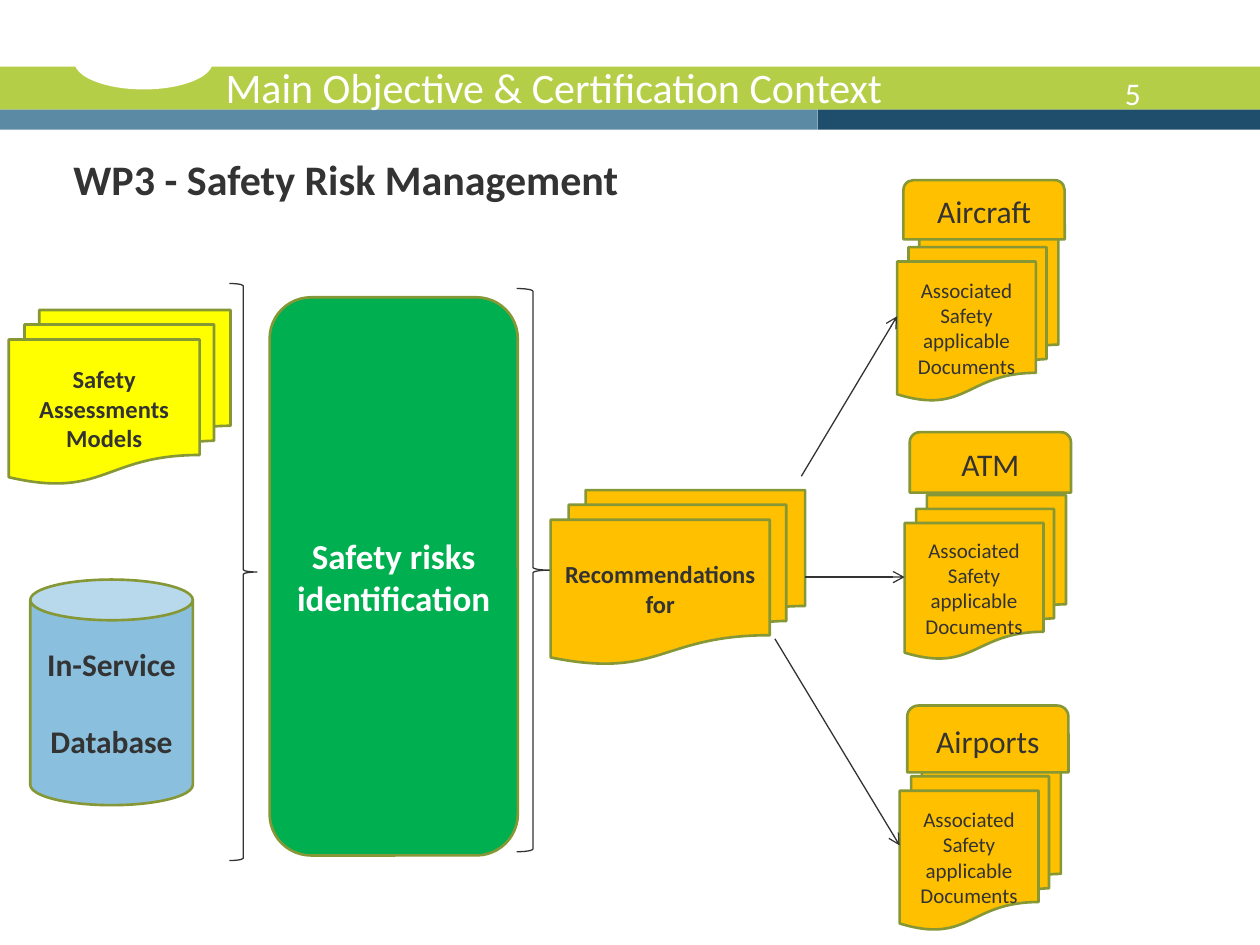
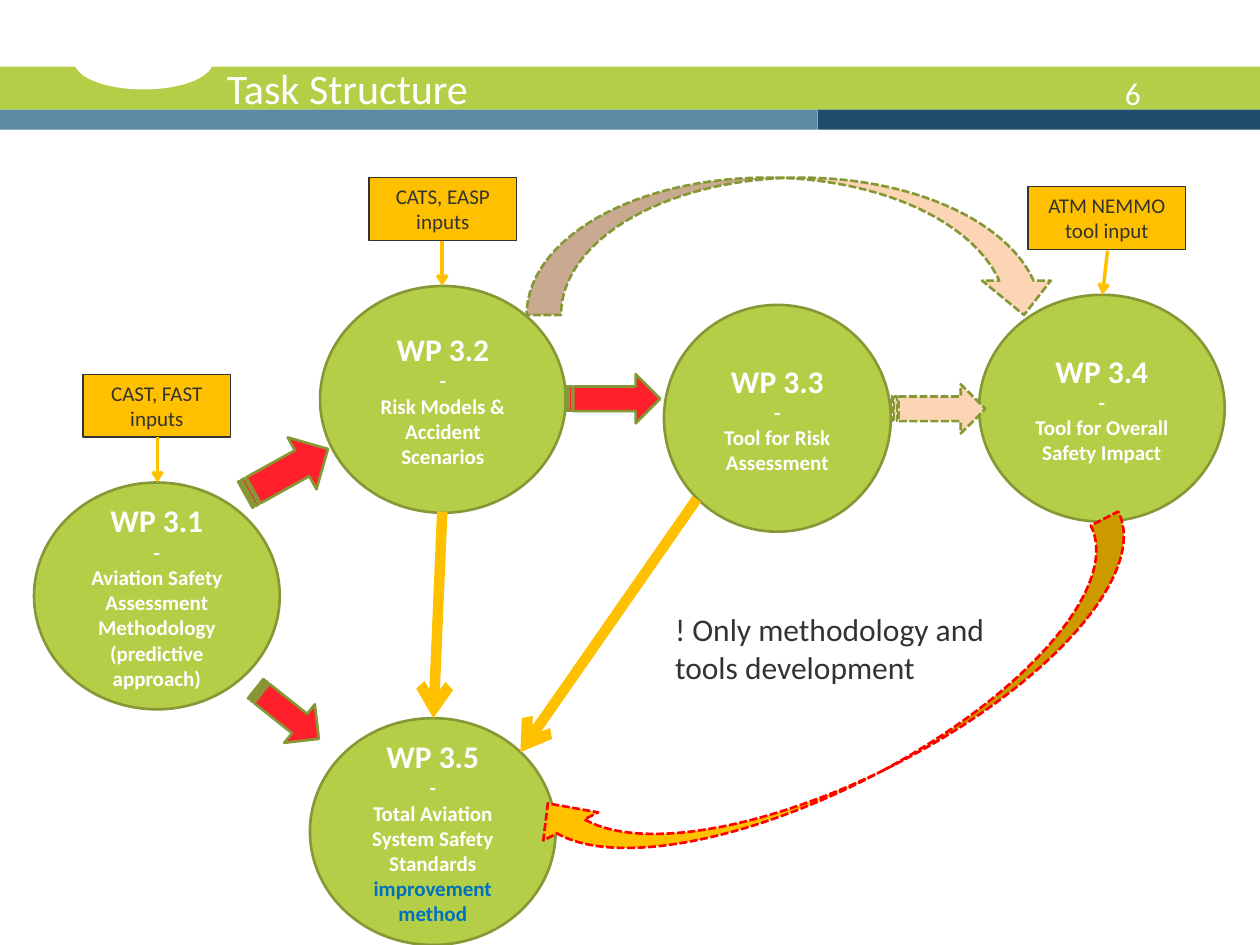
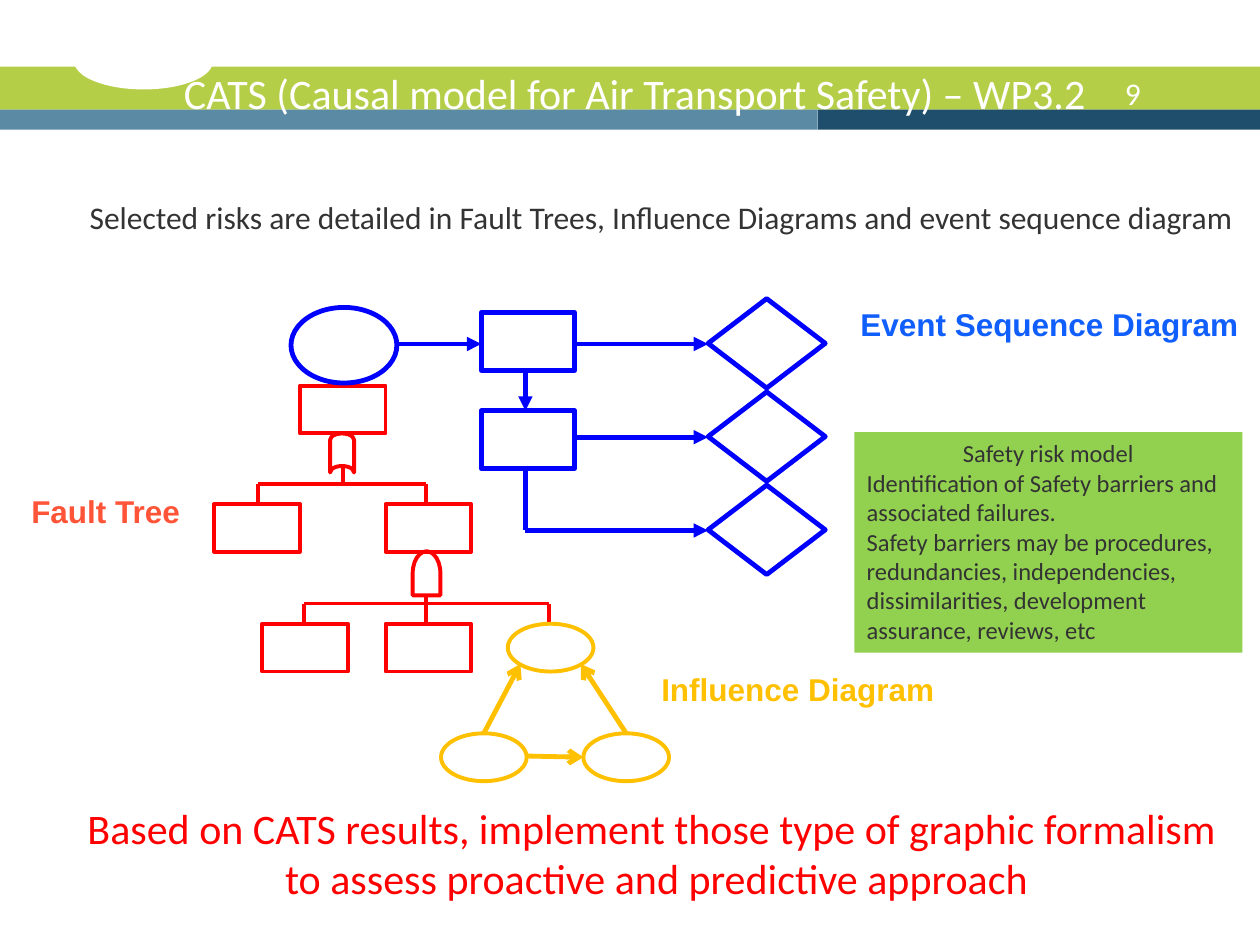
from dataclasses import dataclass
from typing import NamedTuple, Optional, Sequence

from lxml.etree import SubElement
from pptx import Presentation
from pptx.dml.color import RGBColor
from pptx.enum.dml import MSO_LINE
from pptx.enum.shapes import MSO_CONNECTOR, MSO_SHAPE as Form
from pptx.enum.text import MSO_ANCHOR as Anchor, MSO_AUTO_SIZE as AutoSize, PP_ALIGN as Align
from pptx.oxml.ns import qn
from pptx.shapes.autoshape import Shape
from pptx.slide import Slide
from pptx.text.text import TextFrame
from pptx.util import Emu, Pt

PX = 9144  # one px is a hundredth of an inch
TITLE_ONLY = 5

COLOURS = {
    "white": "FFFFFF", "ink": "333333", "lime": "B5CE48", "olive": "869835",
    "navy": "1E4E6B", "steel": "5B8AA5", "sky": "8ABFDE", "amber": "FFC000",
    "yellow": "FFFF00", "green": "00B050", "leaf": "92D050", "scarlet": "FF202C",
    "red": "FF0000", "blue": "0000FF", "peach": "FCD5B5", "accent": "0070C0",
    "sequence": "105FFC", "fault": "FF5437",
}


class Box(NamedTuple):
    left: int
    top: int
    width: int
    height: int


class Link(NamedTuple):
    x1: int
    y1: int
    x2: int
    y2: int
    head: Optional[str] = None


@dataclass
class Line:
    text: str
    size: int
    colour: str = "ink"
    bold: bool = False
    font: str = "Calibri"
    before: int = 0
    ending: str = ""  # closing words in the accent colour


@dataclass
class Block:
    form: Form
    box: Box
    fill: Optional[str] = None
    edge: Optional[str] = "olive"
    weight: float = 1.5
    dashed: bool = False
    turn: float = 0


@dataclass
class WorkPackage:
    number: str
    box: Box
    task: str
    ending: str = ""


@dataclass
class Domain:
    name: str
    header: Box
    documents: Box


def px(*lengths: int) -> list[Emu]:
    return [Emu(length * PX) for length in lengths]


def colour(name: str) -> RGBColor:
    return RGBColor.from_string(COLOURS[name])


def write(frame: TextFrame, lines: Sequence[Line], align: Align = Align.CENTER,
          anchor: Anchor = Anchor.MIDDLE, wrap: bool = True) -> None:
    frame.word_wrap = wrap
    frame.auto_size = AutoSize.NONE if wrap else AutoSize.SHAPE_TO_FIT_TEXT
    frame.vertical_anchor = anchor
    for index, line in enumerate(lines):
        paragraph = frame.add_paragraph() if index else frame.paragraphs[0]
        paragraph.text = line.text
        paragraph.alignment = align
        if line.before:
            paragraph.space_before = Pt(line.before)
        if line.ending:
            paragraph.add_run().text = line.ending
        for run in paragraph.runs:
            run.font.name = line.font
            run.font.size = Pt(line.size)
            run.font.bold = line.bold
            run.font.color.rgb = colour(line.colour)
        if line.ending:
            paragraph.runs[-1].font.color.rgb = colour("accent")


def add_block(slide: Slide, block: Block, *lines: Line, anchor: Anchor = Anchor.MIDDLE) -> Shape:
    shape = slide.shapes.add_shape(block.form, *px(*block.box))
    shape.shadow.inherit = False
    shape.rotation = block.turn
    if block.fill:
        shape.fill.solid()
        shape.fill.fore_color.rgb = colour(block.fill)
    else:
        shape.fill.background()
    if block.edge:
        shape.line.color.rgb = colour(block.edge)
        shape.line.width = Pt(block.weight)
        if block.dashed:
            shape.line.dash_style = MSO_LINE.SQUARE_DOT
    else:
        shape.line.fill.background()
    if lines:
        write(shape.text_frame, lines, anchor=anchor)
    return shape


def add_text(slide: Slide, box: Box, *lines: Line, align: Align = Align.LEFT,
             anchor: Anchor = Anchor.TOP, wrap: bool = True) -> None:
    frame = slide.shapes.add_textbox(*px(*box)).text_frame
    write(frame, lines, align, anchor, wrap)


def add_links(slide: Slide, links: Sequence[Link], stroke: str, weight: float) -> None:
    for link in links:
        ends = px(link.x1, link.y1, link.x2, link.y2)
        connector = slide.shapes.add_connector(MSO_CONNECTOR.STRAIGHT, *ends)
        connector.line.color.rgb = colour(stroke)
        connector.line.width = Pt(weight)
        properties = connector.element.spPr
        if link.head:
            SubElement(properties.find(qn("a:ln")), qn("a:tailEnd"), type=link.head)
        SubElement(properties, qn("a:effectLst"))


def start_slide(deck: Presentation, title: str, number: int, title_box: Box) -> Slide:
    """Add a slide with the shared bands, page number and title."""
    slide = deck.slides.add_slide(deck.slide_layouts[TITLE_ONLY])
    for form, box, fill in (
        (Form.RECTANGLE, Box(0, 53, 1000, 34), "lime"),
        (Form.RECTANGLE, Box(649, 87, 351, 16), "navy"),
        (Form.RECTANGLE, Box(0, 87, 649, 16), "steel"),
        (Form.OVAL, Box(59, 27, 110, 44), "white"),
    ):
        add_block(slide, Block(form, box, fill, edge=None))
    add_text(slide, Box(883, 54, 83, 40), Line(str(number), 18, "white"))
    heading = slide.shapes.title
    heading.left, heading.top, heading.width, heading.height = px(*title_box)
    write(heading.text_frame, [Line(title, 24, "white")], Align.LEFT, Anchor.BOTTOM)
    heading.element.getparent().append(heading.element)  # in front of the bands
    return slide


def build_risk_management(deck: Presentation) -> None:
    slide = start_slide(deck, "Main Objective & Certification Context", 5, Box(169, 11, 852, 83))
    add_block(slide, Block(Form.ROUNDED_RECTANGLE, Box(214, 236, 197, 443), "green"),
              Line("Safety risks identification", 20, "white", True))
    add_block(slide, Block(Form.FLOWCHART_MULTIDOCUMENT, Box(437, 389, 202, 138), "amber"),
              Line("Recommendations for", 14, bold=True))
    for brace in (Box(410, 229, 26, 447), Box(182, 225, 22, 458)):
        add_block(slide, Block(Form.RIGHT_BRACE, brace, edge="ink", weight=0.75))

    for domain in (
        Domain("Aircraft", Box(717, 143, 128, 47), Box(712, 185, 128, 133)),
        Domain("ATM", Box(722, 343, 128, 48), Box(718, 393, 128, 130)),
        Domain("Airports", Box(720, 560, 128, 53), Box(714, 605, 128, 133)),
    ):
        add_block(slide, Block(Form.FLOWCHART_MULTIDOCUMENT, domain.documents, "amber"),
                  Line("Associated Safety applicable Documents", 12))
        add_block(slide, Block(Form.ROUND_2_SAME_RECTANGLE, domain.header, "amber"),
                  Line(domain.name, 18))
    to_domains = (Link(636, 378, 712, 251, "arrow"), Link(639, 458, 718, 458, "arrow"),
                  Link(615, 507, 714, 671, "arrow"))
    add_links(slide, to_domains, "ink", 0.75)

    add_block(slide, Block(Form.FLOWCHART_MULTIDOCUMENT, Box(7, 246, 176, 138), "yellow"),
              Line("Safety Assessments Models", 14, bold=True))
    add_block(slide, Block(Form.CAN, Box(24, 460, 129, 179), "sky"),
              Line("In-Service", 18, bold=True), Line("Database", 18, bold=True, before=22))
    add_text(slide, Box(24, 117, 501, 50), Line("WP3 - Safety Risk Management", 24, bold=True),
             align=Align.CENTER)


def build_task_structure(deck: Presentation) -> None:
    slide = start_slide(deck, "Task Structure", 6, Box(170, 12, 789, 83))
    for package in (
        WorkPackage("3.1", Box(27, 383, 195, 180),
                    "Aviation Safety Assessment Methodology (predictive approach)"),
        WorkPackage("3.2", Box(254, 227, 195, 180), "Risk Models & Accident Scenarios"),
        WorkPackage("3.4", Box(777, 234, 195, 180), "Tool for Overall Safety Impact"),
        WorkPackage("3.3", Box(527, 242, 180, 180), "Tool for Risk Assessment"),
        WorkPackage("3.5", Box(246, 570, 195, 180),
                    "Total Aviation System Safety Standards ", "improvement method"),
    ):
        add_block(slide, Block(Form.OVAL, package.box, "lime"),
                  Line(f"WP {package.number}", 18, "white", True),
                  Line("-", 12, "white", True),
                  Line(package.task, 12, "white", True, ending=package.ending))

    striped, curved = Form.STRIPED_RIGHT_ARROW, Form.CURVED_DOWN_ARROW
    for flow in (
        Block(striped, Box(190, 351, 75, 47), "scarlet", turn=331),
        Block(striped, Box(449, 297, 75, 39), "scarlet"),
        Block(striped, Box(196, 547, 64, 39), "scarlet", turn=38.5),
        Block(striped, Box(707, 305, 75, 39), "peach", dashed=True),
        Block(curved, Box(418, 141, 422, 109), "peach", dashed=True),
        Block(curved, Box(406, 522, 533, 98), "amber", "red", dashed=True, turn=152.9),
    ):
        add_block(slide, flow)
    add_text(slide, Box(526, 479, 297, 57), Line("! Only methodology and tools development", 18))
    to_standards = (Link(553, 396, 413, 597, "arrow"), Link(351, 406, 344, 570, "arrow"))
    add_links(slide, to_standards, "amber", 6)

    for source, box in (
        ("CATS, EASP inputs", Box(293, 141, 117, 50)),
        ("CAST, FAST inputs", Box(66, 297, 117, 50)),
        ("ATM NEMMO tool input", Box(816, 148, 125, 50)),
    ):
        add_block(slide, Block(Form.RECTANGLE, box, "amber", "ink", 0.75),
                  Line(source, 12), anchor=Anchor.TOP)
    from_sources = (Link(125, 347, 125, 383, "arrow"), Link(351, 191, 351, 227, "arrow"),
                    Link(879, 199, 875, 234, "arrow"))
    add_links(slide, from_sources, "amber", 2)


def draw_fault_tree(slide: Slide) -> None:
    for left, top in ((238, 306), (306, 400), (170, 400), (208, 495), (306, 495)):
        add_block(slide, Block(Form.RECTANGLE, Box(left, top, 68, 38), edge="red", weight=2.25))
    for gate, box, turn in (
        (Form.FLOWCHART_DELAY, Box(321, 444, 35, 22), 270),
        (Form.FLOWCHART_STORED_DATA, Box(256, 350, 31, 19), 90),
    ):
        add_block(slide, Block(gate, box, edge="red", weight=2.25, turn=turn))
    branches = (
        Link(272, 369, 272, 384), Link(205, 384, 338, 384),
        Link(205, 384, 205, 400), Link(338, 384, 338, 400),
        Link(338, 473, 338, 495), Link(241, 479, 436, 479),
        Link(241, 479, 241, 495), Link(436, 479, 436, 495),
    )
    add_links(slide, branches, "red", 2.25)


def draw_event_sequence(slide: Slide) -> None:
    events = [(Form.OVAL, Box(231, 244, 84, 60))]
    events += [(Form.RECTANGLE, Box(382, top, 74, 46)) for top in (248, 326)]
    events += [(Form.DIAMOND, Box(562, 237 + 74 * row, 93, 71)) for row in range(3)]
    for form, box in events:
        add_block(slide, Block(form, box, edge="blue", weight=2.75))
    steps = (
        Link(314, 273, 382, 273, "triangle"), Link(456, 273, 562, 273, "triangle"),
        Link(456, 347, 562, 347, "triangle"), Link(417, 421, 562, 421, "triangle"),
        Link(417, 371, 417, 421), Link(417, 294, 417, 326, "triangle"),
    )
    add_links(slide, steps, "blue", 2.75)


def draw_influences(slide: Slide) -> None:
    for left, top in ((403, 495), (350, 582), (463, 582)):
        add_block(slide, Block(Form.OVAL, Box(left, top, 68, 38), edge="amber", weight=2.25))
    influences = (Link(417, 600, 463, 601, "arrow"), Link(384, 582, 413, 527, "arrow"),
                  Link(497, 582, 461, 527, "arrow"))
    add_links(slide, influences, "amber", 2.75)


def build_causal_model(deck: Presentation) -> None:
    slide = start_slide(deck, "CATS (Causal model for Air Transport Safety) – WP3.2", 9,
                        Box(136, 16, 828, 83))
    draw_fault_tree(slide)
    draw_event_sequence(slide)
    draw_influences(slide)
    for diagram, box, tint in (
        ("Event Sequence Diagram", Box(673, 237, 327, 40), "sequence"),
        ("Fault Tree", Box(15, 386, 146, 40), "fault"),
        ("Influence Diagram", Box(515, 527, 246, 41), "amber"),
    ):
        add_text(slide, box, Line(diagram, 18, tint, True, "Arial"), wrap=False)

    add_text(slide, Box(0, 134, 1050, 58),
             Line("Selected risks are detailed in Fault Trees, Influence Diagrams "
                  "and event sequence diagram", 18),
             align=Align.CENTER, anchor=Anchor.BOTTOM)
    add_text(slide, Box(59, 632, 924, 91),
             Line("Based on CATS results, implement those type of graphic formalism ", 24, "red"),
             Line("to assess proactive and predictive approach", 24, "red"),
             align=Align.CENTER, wrap=False)
    risk_model = add_block(
        slide, Block(Form.RECTANGLE, Box(678, 343, 308, 175), "leaf", edge=None),
        Line("Safety risk model", 14),
        Line("Identification of Safety barriers and associated failures.", 14),
        Line("Safety barriers may be procedures, redundancies, independencies, "
             "dissimilarities, development assurance, reviews, etc", 14),
        anchor=Anchor.TOP)
    for paragraph in risk_model.text_frame.paragraphs[1:]:
        paragraph.alignment = Align.LEFT


def main() -> None:
    deck = Presentation()
    deck.slide_width, deck.slide_height = px(1000, 750)
    build_risk_management(deck)
    build_task_structure(deck)
    build_causal_model(deck)
    deck.save("out.pptx")


if __name__ == "__main__":
    main()
